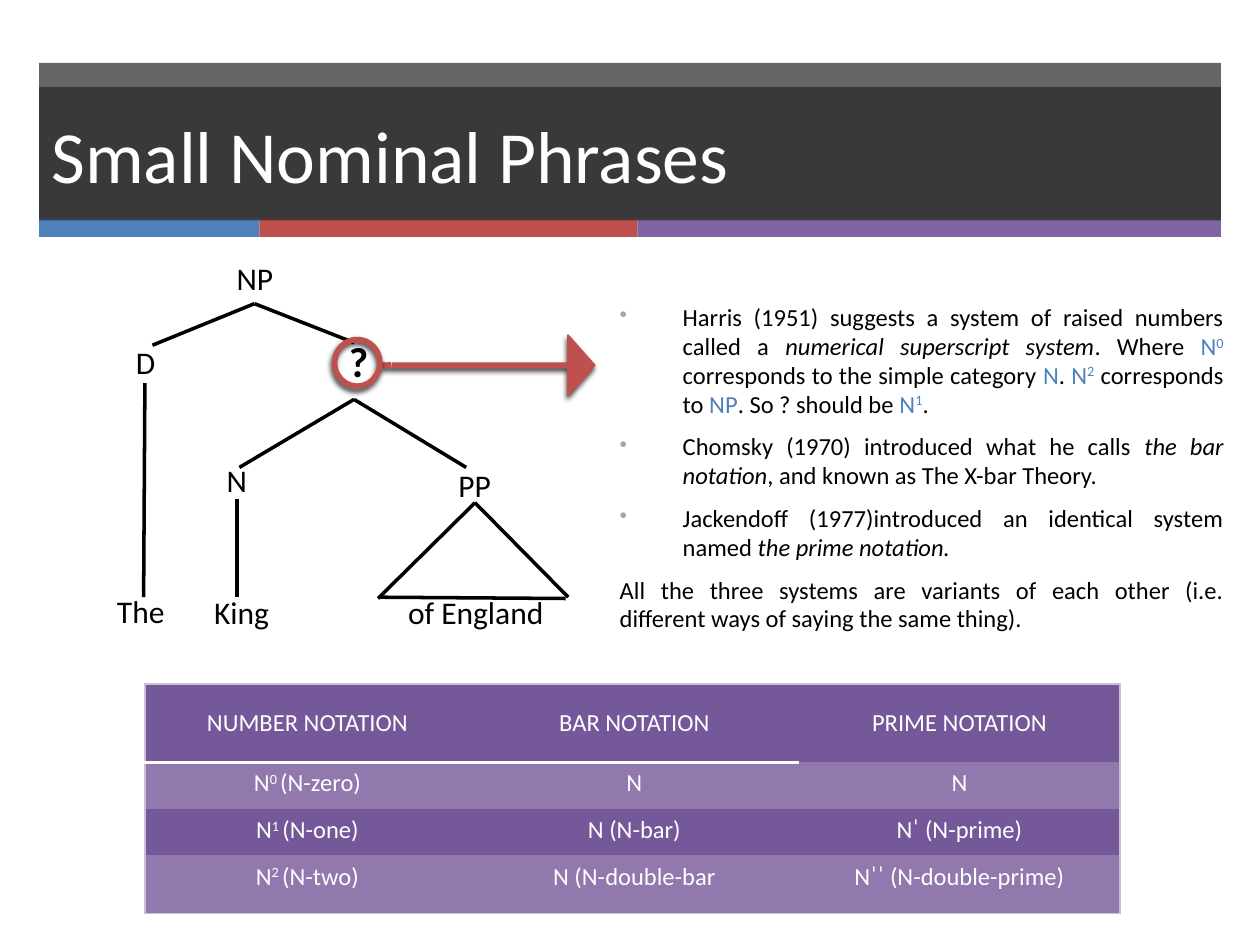
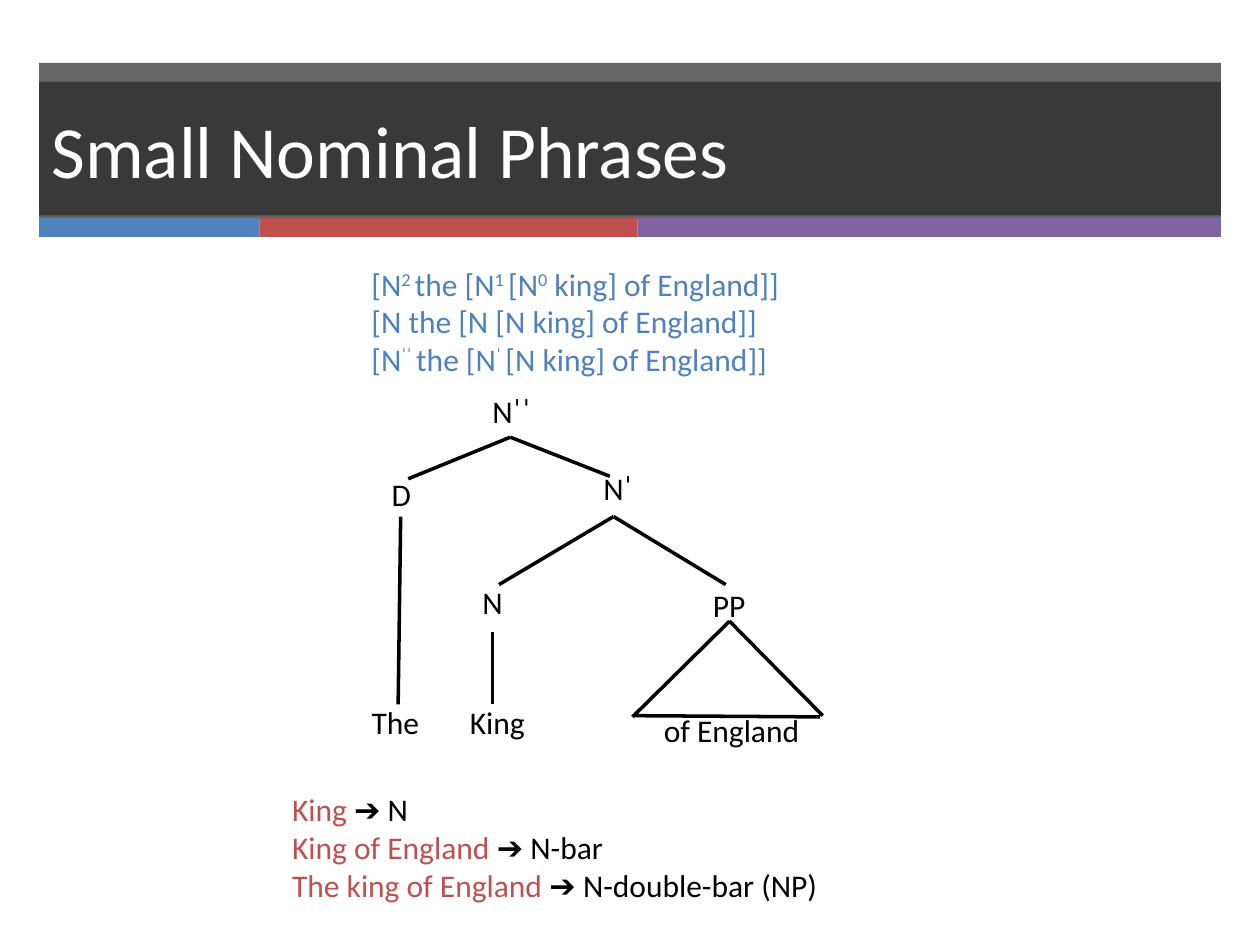
from dataclasses import dataclass

from lxml import etree
from pptx import Presentation
from pptx.dml.color import RGBColor
from pptx.enum.shapes import MSO_CONNECTOR, MSO_SHAPE
from pptx.enum.text import MSO_ANCHOR, PP_ALIGN
from pptx.oxml.ns import qn
from pptx.util import Inches, Pt

RECTANGLE = MSO_SHAPE.RECTANGLE
ARROW = MSO_SHAPE.STRIPED_RIGHT_ARROW
RING = MSO_SHAPE.DONUT
STRAIGHT = MSO_CONNECTOR.STRAIGHT
MIDDLE, TOP = MSO_ANCHOR.MIDDLE, MSO_ANCHOR.TOP
LEFT, CENTER, JUSTIFY = PP_ALIGN.LEFT, PP_ALIGN.CENTER, PP_ALIGN.JUSTIFY

FONT = "Calibri"
COLORS = {
    "black": "000000", "white": "FFFFFF", "dark": "262626", "bullet": "A6A6A6",
    "blue": "4F81BD", "red": "C0504D", "purple": "8064A2",
    "row_dark": "755899", "row_light": "9179AD", "table_edge": "C8C1D3",
}
BAND_LEFT, BAND_WIDTH = 0.31, 9.38
STRIPES = [("blue", 1.75), ("red", 3), ("purple", 4.63)]

# Ends of the tree lines, measured from the apex they hang from
TOP_BRANCHES = [(-0.81, 0.33), (0.79, 0.31)]
MIDDLE_BRANCHES = [(-0.91, 0.54), (0.89, 0.54)]
TRIANGLE_SIDES = [(-0.77, 0.76), (0.74, 0.75)]
TRIANGLE_BASE = [(-0.75, 0.75), (0.72, 0.76)]


@dataclass
class Span:
    text: str
    color: str = "black"
    raised: bool = False
    italic: bool = False
    bold: bool = False


def rgb(name):
    return RGBColor.from_string(COLORS[name])


def add_color(parent, name, alpha=None):
    color = etree.SubElement(parent, qn("a:srgbClr"), val=COLORS[name])
    if alpha:
        etree.SubElement(color, qn("a:alpha"), val=str(alpha * 1000))


def category(level, color="blue"):
    """Spans of an N with a raised level."""
    return [Span("N", color), Span(level, color, raised=True)]


def add_spans(para, spans, size):
    for item in spans:
        span = para.add_run()
        span.text = item.text
        font = span.font
        font.name, font.size = FONT, Pt(size)
        font.bold, font.italic = item.bold, item.italic
        font.color.rgb = rgb(item.color)
        if item.raised:
            span._r.get_or_add_rPr().set("baseline", "30000")


def add_text(page, at, paragraphs, size=18):
    box = page.shapes.add_textbox(*map(Inches, at))
    frame = box.text_frame
    frame.word_wrap = True
    for index, spans in enumerate(paragraphs):
        para = frame.paragraphs[0] if index == 0 else frame.add_paragraph()
        add_spans(para, spans, size)
    return box


def add_block(page, kind, at, color, alpha=None):
    block = page.shapes.add_shape(kind, *map(Inches, at))
    block.shadow.inherit = False
    block.fill.solid()
    block.fill.fore_color.rgb = rgb(color)
    block.line.fill.background()
    if alpha:
        fill = block._element.spPr.find(qn("a:solidFill"))
        fill.clear()
        add_color(fill, color, alpha)
    return block


def add_marker(page, kind, at, adjustments):
    """Red shape with an outline and a soft shadow."""
    marker = add_block(page, kind, at, "red")
    marker.line.color.rgb = rgb("red")
    marker.line.width = Pt(1)
    for index, value in enumerate(adjustments):
        marker.adjustments[index] = value
    effects = marker._element.spPr.find(qn("a:effectLst"))
    shadow = etree.SubElement(effects, qn("a:outerShdw"), blurRad=str(Pt(3)),
                              dist=str(Pt(2)), dir=str(110 * 60000))
    add_color(shadow, "black", 75)


def add_line(page, start, end):
    line = page.shapes.add_connector(STRAIGHT, *map(Inches, (*start, *end)))
    line.line.color.rgb = rgb("black")
    line.line.width = Pt(2)
    etree.SubElement(line._element.spPr, qn("a:effectLst"))


def add_header(page, title, title_top):
    add_block(page, RECTANGLE, (BAND_LEFT, 0.5, BAND_WIDTH, 1.24), "dark", 70)
    left = BAND_LEFT
    for color, width in STRIPES:
        add_block(page, RECTANGLE, (left, 1.73, width, 0.15), color)
        left += width
    band = add_block(page, RECTANGLE, (BAND_LEFT, title_top, BAND_WIDTH, 1.06), "dark", 70)
    frame = band.text_frame
    frame.word_wrap = True
    frame.vertical_anchor = MIDDLE
    frame.paragraphs[0].alignment = LEFT
    add_spans(frame.paragraphs[0], [Span(title, "white")], 42)


def add_tree(page, top, middle, phrase, stems, labels):
    """Draw the phrase tree from its three apexes, its stems and its labels."""
    def offset(apex, step):
        return apex[0] + step[0], apex[1] + step[1]

    for apex, steps in ((top, TOP_BRANCHES), (middle, MIDDLE_BRANCHES),
                        (phrase, TRIANGLE_SIDES)):
        for step in steps:
            add_line(page, apex, offset(apex, step))
    add_line(page, *(offset(phrase, step) for step in TRIANGLE_BASE))
    for start, end in stems:
        add_line(page, start, end)
    for text, left, label_top in labels:
        width = 1.43 if len(text) > 4 else 0.65
        add_text(page, (left, label_top, width, 0.4), [[Span(text)]])


def format_list_item(para, bulleted):
    para.alignment = JUSTIFY
    para.space_before = Pt(8)
    para.line_spacing = 0.98
    if bulleted:
        props = para._p.get_or_add_pPr()
        props.set("marL", str(Inches(0.5)))
        props.set("indent", str(Inches(-0.5)))
        add_color(etree.SubElement(props, qn("a:buClr")), "bullet")
        etree.SubElement(props, qn("a:buSzPct"), val="90000")
        etree.SubElement(props, qn("a:buChar"), char="•")


def set_borders(cell, edges):
    """Draw the given edges (side: colour, points) and clear the others."""
    props = cell._tc.get_or_add_tcPr()
    for side in "LRTB":
        color, points = edges.get(side, (None, 0))
        line = etree.SubElement(props, qn(f"a:ln{side}"), w=str(Pt(points)))
        if color:
            add_color(etree.SubElement(line, qn("a:solidFill")), color)
        else:
            etree.SubElement(line, qn("a:noFill"))


def cell_edges(row, column, last_row, last_column):
    edge, rule = ("table_edge", 1), ("white", 2)
    edges = {}
    if column == 0:
        edges["L"] = edge
    if column == last_column:
        edges["R"] = edge
    if row == 0:
        edges["T"] = edge
    if row == last_row:
        edges["B"] = edge
    if column < last_column and row < 2:
        edges["B" if row == 0 else "T"] = rule
    return edges


def add_notation_table(page, rows, widths, heights):
    at = (1.15, 5.43, sum(widths), sum(heights))
    table = page.shapes.add_table(len(rows), len(widths), *map(Inches, at)).table
    table.first_row = table.horz_banding = False
    for column, width in zip(table.columns, widths):
        column.width = Inches(width)
    for row, (height, texts) in enumerate(zip(heights, rows)):
        table.rows[row].height = Inches(height)
        for column, spans in enumerate(texts):
            cell = table.cell(row, column)
            set_borders(cell, cell_edges(row, column, len(rows) - 1, len(widths) - 1))
            cell.fill.solid()
            cell.fill.fore_color.rgb = rgb("row_light" if row % 2 else "row_dark")
            cell.vertical_anchor = TOP if row else MIDDLE
            para = cell.text_frame.paragraphs[0]
            para.alignment = CENTER
            add_spans(para, spans, 14)


def build_notation_page(page):
    add_header(page, "Small Nominal Phrases", 0.69)
    history = [
        [Span("Harris (1951) suggests a system of raised numbers called a "),
         Span("numerical superscript system", italic=True), Span(". Where "),
         *category("0"), Span(" corresponds to the simple category "),
         Span("N", "blue"), Span(". "), *category("2"), Span(" corresponds to "),
         Span("NP", "blue"), Span(". So ? should be "), *category("1"), Span(".")],
        [Span("Chomsky (1970) introduced what he calls "),
         Span("the bar notation", italic=True),
         Span(", and known as The X-bar Theory.")],
        [Span("Jackendoff (1977)introduced an identical system named "),
         Span("the prime notation.", italic=True)],
        [Span("All the three systems are variants of each other "
              "(i.e. different ways of saying the same thing).")],
    ]
    body = add_text(page, (4.82, 2.36, 4.99, 2.8), history, 14)
    paragraphs = body.text_frame.paragraphs
    for para in paragraphs:
        format_list_item(para, bulleted=para._p is not paragraphs[-1]._p)

    add_tree(page, top=(2.02, 2.41), middle=(2.81, 3.17), phrase=(3.77, 3.99),
             stems=[((1.88, 3.96), (1.88, 4.74)), ((1.15, 3.04), (1.14, 4.74))],
             labels=[("NP", 1.78, 2.01), ("D", 0.98, 2.67), ("N", 1.7, 3.61),
                     ("PP", 3.54, 3.65), ("The", 0.83, 4.65), ("King", 1.6, 4.66),
                     ("of England", 3.14, 4.66)])
    add_text(page, (2.67, 2.61, 0.65, 0.5), [[Span("?", bold=True)]], 24)
    add_marker(page, ARROW, (3.04, 2.66, 1.68, 0.48), [0.071, 0.442])
    add_marker(page, RING, (2.64, 2.68, 0.39, 0.4), [0.077])

    def numbered(level, name):
        return [*category(f"{level} ", "white"), Span(f"({name})", "white")]

    def plain(*texts):
        return [[Span(text, "white")] for text in texts]

    rows = [
        plain("NUMBER NOTATION", "BAR NOTATION", "PRIME NOTATION"),
        [numbered(0, "N-zero"), *plain("N", "N")],
        [numbered(1, "N-one"), *plain("N (N-bar)", "Nˈ (N-prime)")],
        [numbered(2, "N-two"), *plain("N (N-double-bar", "Nˈˈ (N-double-prime)")],
    ]
    add_notation_table(page, rows, [2.58, 2.61, 2.55], [0.62, 0.37, 0.37, 0.46])


def build_bracket_page(page):
    add_header(page, "Small Nominal Phrases", 0.65)
    add_tree(page, top=(4.05, 3.47), middle=(4.87, 4.1), phrase=(5.79, 4.93),
             stems=[((3.91, 5.02), (3.91, 5.59)), ((3.18, 4.1), (3.16, 5.59))],
             labels=[("Nˈˈ", 3.81, 3.06), ("Nˈ", 4.69, 3.67), ("D", 3.01, 3.72),
                     ("N", 3.73, 4.58), ("PP", 5.56, 4.6), ("The", 2.85, 5.53),
                     ("King", 3.63, 5.53), ("of England", 5.17, 5.59)])

    readings = [("King ", "N"), ("King of England ", "N-bar"),
                ("The king of England ", "N-double-bar (NP)")]
    add_text(page, (2.22, 6.22, 5.9, 1.01),
             [[Span(words, "red"), Span(f"➔ {label}")] for words, label in readings])

    def bracketed(outer, inner, head):
        return [Span("[", "blue"), *category(outer), Span("the [", "blue"),
                *category(inner), Span("[", "blue"), *head,
                Span(" king] of England]]", "blue")]

    bare = [Span("N", "blue")]
    add_text(page, (2.85, 2.05, 4.74, 1.01), [
        bracketed("2 ", "1 ", category("0")),
        [Span("[N the [N [N king] of England]]", "blue")],
        bracketed("ˈˈ ", "ˈ ", bare),
    ])


def main():
    deck = Presentation()
    deck.slide_width, deck.slide_height = Inches(10), Inches(7.5)
    blank = deck.slide_layouts[6]
    for build in (build_notation_page, build_bracket_page):
        build(deck.slides.add_slide(blank))
    deck.save("out.pptx")


if __name__ == "__main__":
    main()
